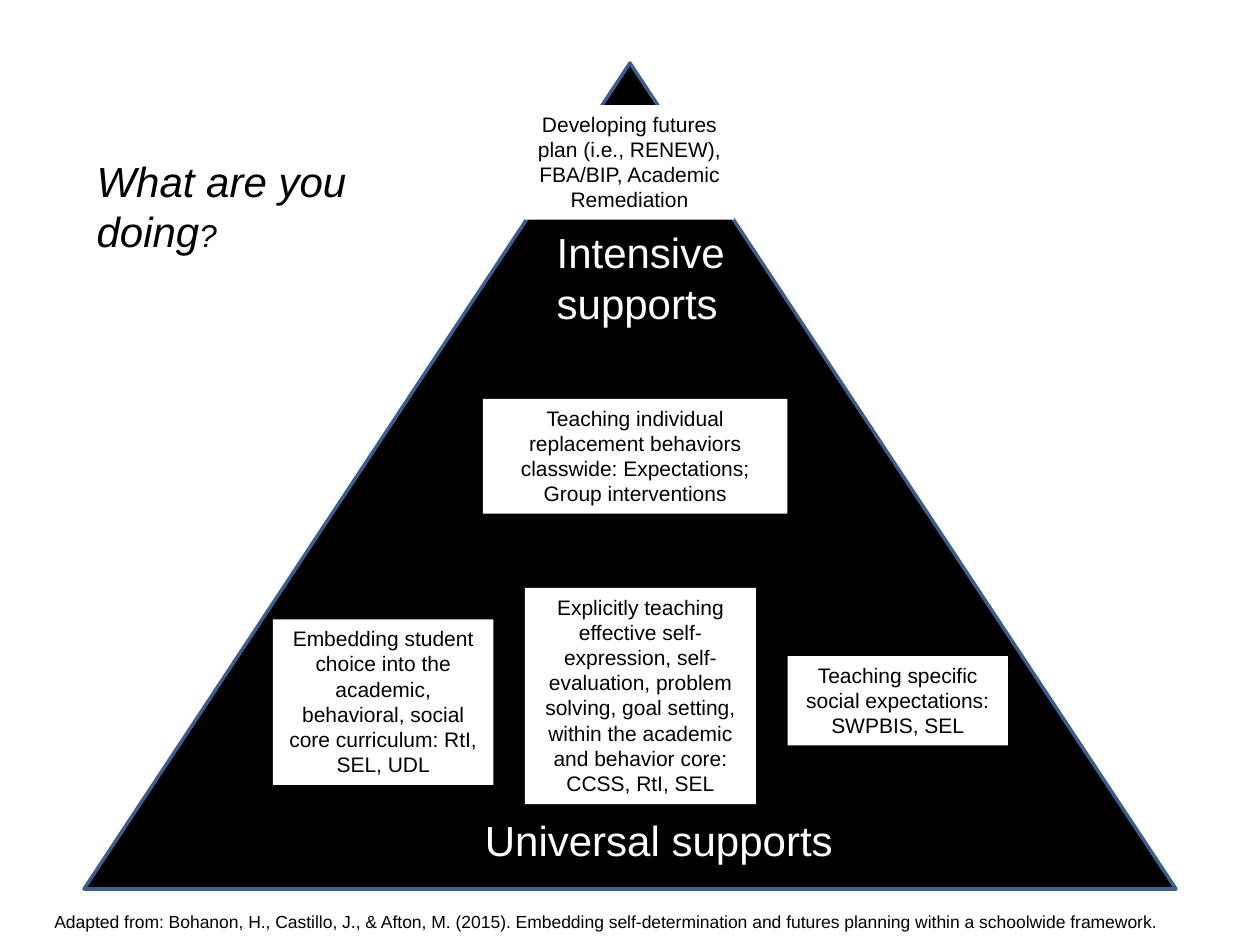
"""Build the pyramid of student supports slide."""
from pptx import Presentation
from pptx import util as u
from pptx.dml.color import RGBColor
from pptx.enum import shapes, text

BLACK, WHITE, BLUE = "000000", "FFFFFF", "3A5F8C"
SIZE = (720, 540)
PEAK = (48, 36, 624, 472)
TITLE = ("What are you doing", "?", (48, 85, 170, 66))
CARDS = [
    ("Developing futures plan (i.e., RENEW), FBA/BIP, Academic Remediation",
     (300, 60, 119.5, 65.5)),
    ("Teaching specific social expectations: SWPBIS, SEL",
     (450, 375, 126, 51)),
    ("Embedding student choice into the academic, behavioral, social core "
     "curriculum: RtI, SEL, UDL", (156, 354, 126, 94.5)),
    ("Explicitly teaching effective self-expression, self-evaluation, problem "
     "solving, goal setting, within the academic and behavior core: "
     "CCSS, RtI, SEL", (300, 336, 132, 123.5)),
    ("Teaching individual replacement behaviors classwide: Expectations; "
     "Group interventions", (276, 228, 174, 65.5)),
]
LABELS = [
    ("Universal supports", (270, 462, 215.5, 36), 24, WHITE),
    ("Intensive\nsupports", (311, 126, 118, 65.5), 24, WHITE),
    ("Adapted from: Bohanon, H., Castillo, J., & Afton, M. (2015). Embedding "
     "self-determination and futures planning within a schoolwide framework.",
     (24, 517, 653, 19.5), 10, BLACK),
]


def tint(code):
    return RGBColor.from_string(code)


def pts(box):
    return [u.Pt(n) for n in box]


def style(font, code, **form):
    for key, val in {"name": "Arial", **form}.items():
        setattr(font, key, val)
    font.color.rgb = tint(code)


def write(shape, words, size, code, align=text.PP_ALIGN.LEFT):
    frame = shape.text_frame
    frame.word_wrap = True
    frame.vertical_anchor = text.MSO_ANCHOR.TOP
    frame.text = words
    for para in frame.paragraphs:
        para.alignment = align
        for run in para.runs:
            style(run.font, code, size=u.Pt(size))


def block(slide, kind, box, code):
    shape = slide.shapes.add_shape(kind, *pts(box))
    shape.shadow.inherit = False
    shape.fill.solid()
    shape.fill.fore_color.rgb = tint(code)
    shape.line.fill.background()
    return shape


def main():
    deck = Presentation()
    deck.slide_width, deck.slide_height = pts(SIZE)
    slide = deck.slides.add_slide(deck.slide_layouts[5])
    kinds = shapes.MSO_SHAPE

    peak = block(slide, kinds.ISOSCELES_TRIANGLE, PEAK, BLACK)
    peak.line.color.rgb = tint(BLUE)
    peak.line.width = u.Pt(2)
    for words, box in CARDS:
        card = block(slide, kinds.RECTANGLE, box, WHITE)
        write(card, words, 12, BLACK, text.PP_ALIGN.CENTER)
    for words, box, size, code in LABELS:
        write(slide.shapes.add_textbox(*pts(box)), words, size, code)

    words, mark, box = TITLE
    title = slide.shapes.title
    title.left, title.top, title.width, title.height = pts(box)
    write(title, words, 24, BLACK)
    title.text_frame.auto_size = text.MSO_AUTO_SIZE.NONE
    para = title.text_frame.paragraphs[0]
    para.runs[0].font.italic = True
    end = para.add_run()
    end.text = mark
    style(end.font, BLACK, size=u.Pt(18), italic=True)
    deck.save("out.pptx")


if __name__ == "__main__":
    main()
